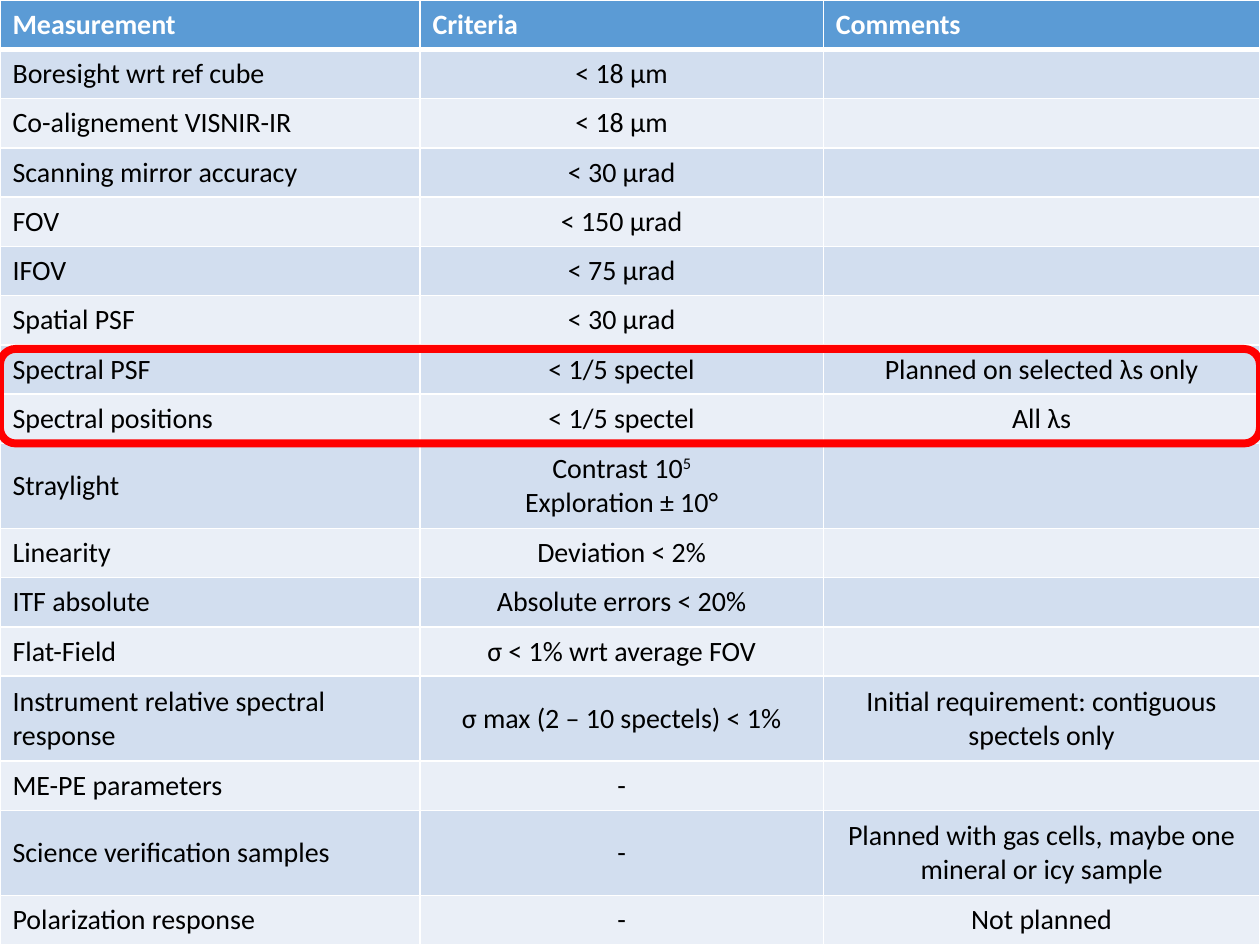
import pptx
import pptx.dml.color
import pptx.enum.shapes
import pptx.enum.text
import pptx.oxml
import pptx.oxml.ns
import pptx.util
from lxml import etree

Pt = pptx.util.Pt
qn = pptx.oxml.ns.qn
ALIGN = pptx.enum.text.PP_ALIGN

COLORS = {
    "header": "5B9BD5", "odd": "D2DEEF", "even": "EAEFF7",
    "border": "FFFFFF", "header_text": "FFFFFF", "text": "000000",
    "highlight": "FF0000",
}

# A line break starts a new paragraph, ^ starts a superscript
HEADER = ("Measurement", "Criteria", "Comments")
MEASUREMENTS = [
    ("Boresight wrt ref cube", "< 18 µm", ""),
    ("Co-alignement VISNIR-IR", "< 18 µm", ""),
    ("Scanning mirror accuracy", "< 30 µrad", ""),
    ("FOV", "< 150 µrad", ""),
    ("IFOV", "< 75 µrad", ""),
    ("Spatial PSF", "< 30 µrad", ""),
    ("Spectral PSF", "< 1/5 spectel", "Planned on selected λs only"),
    ("Spectral positions", "< 1/5 spectel", "All λs"),
    ("Straylight", "Contrast 10^5\nExploration ± 10°", ""),
    ("Linearity", "Deviation < 2%", ""),
    ("ITF absolute", "Absolute errors < 20%", ""),
    ("Flat-Field", "σ < 1% wrt average FOV", ""),
    ("Instrument relative spectral response", "σ max (2 – 10 spectels) < 1%",
     "Initial requirement: contiguous spectels only"),
    ("ME-PE parameters", "-", ""),
    ("Science verification samples", "-",
     "Planned with gas cells, maybe one mineral or icy sample"),
    ("Polarization response", "-", "Not planned"),
]
COLUMN_WIDTHS = (240, 230.5, 249.5)
ROW_HEIGHT, TALL_ROW_HEIGHT = 28.15, 48.6
TALL_ROWS = {9, 13, 15}


def rgb(name):
    return pptx.dml.color.RGBColor.from_string(COLORS[name])


class SlideBuilder:
    font = {"name": "Calibri", "size": Pt(16)}

    def __init__(self, presentation):
        self.slide = presentation.slides.add_slide(presentation.slide_layouts[6])

    def add_run(self, paragraph, text, color, bold, superscript=False):
        run = paragraph.add_run()
        run.text = text
        for attribute, value in {**self.font, "bold": bold}.items():
            setattr(run.font, attribute, value)
        run.font.color.rgb = rgb(color)
        if superscript:
            run.font._element.set("baseline", "30000")

    def write_text(self, cell, text, color, bold, alignment):
        frame = cell.text_frame
        for index, line in enumerate(text.split("\n")):
            paragraph = frame.add_paragraph() if index else frame.paragraphs[0]
            paragraph.alignment = alignment
            if not line:
                # Keeps an empty cell from stretching its row
                end = etree.SubElement(paragraph._p, qn("a:endParaRPr"))
                end.set("sz", str(int(self.font["size"].pt * 100)))
                continue
            base, _, exponent = line.partition("^")
            self.add_run(paragraph, base, color, bold)
            if exponent:
                self.add_run(paragraph, exponent, color, bold, superscript=True)

    def add_borders(self, cell, top, bottom):
        properties = cell._tc.get_or_add_tcPr()
        for side, width in {"L": 1, "R": 1, "T": top, "B": bottom}.items():
            line = etree.SubElement(properties, qn(f"a:ln{side}"), w=str(Pt(width)))
            fill = etree.SubElement(line, qn("a:solidFill"))
            etree.SubElement(fill, qn("a:srgbClr"), val=COLORS["border"])

    def add_table(self, rows):
        heights = [TALL_ROW_HEIGHT if index in TALL_ROWS else ROW_HEIGHT
                   for index in range(len(rows))]
        table = self.slide.shapes.add_table(
            len(rows), len(COLUMN_WIDTHS), 0, 0,
            Pt(sum(COLUMN_WIDTHS)), Pt(sum(heights))).table
        for column, width in zip(table.columns, COLUMN_WIDTHS):
            column.width = Pt(width)
        for row_index, (texts, height) in enumerate(zip(rows, heights)):
            table.rows[row_index].height = Pt(height)
            is_header = row_index == 0
            band = "header" if is_header else ("even", "odd")[row_index % 2]
            for column_index, text in enumerate(texts):
                cell = table.cell(row_index, column_index)
                self.add_borders(cell, top=3 if row_index == 1 else 1,
                                 bottom=3 if is_header else 1)
                cell.fill.solid()
                cell.fill.fore_color.rgb = rgb(band)
                cell.vertical_anchor = pptx.enum.text.MSO_ANCHOR.MIDDLE
                centered = column_index and not is_header
                self.write_text(cell, text,
                                "header_text" if is_header else "text", is_header,
                                ALIGN.CENTER if centered else ALIGN.LEFT)

    def add_highlight(self, left, top, width, height):
        shape = self.slide.shapes.add_shape(
            pptx.enum.shapes.MSO_SHAPE.ROUNDED_RECTANGLE,
            Pt(left), Pt(top), Pt(width), Pt(height))
        shape.shadow.inherit = False
        shape.fill.background()
        shape.line.color.rgb = rgb("highlight")
        shape.line.width = Pt(4.5)


def main():
    presentation = pptx.Presentation()
    presentation.slide_width, presentation.slide_height = Pt(720), Pt(540)
    builder = SlideBuilder(presentation)

    # Table of measurements
    builder.add_table([HEADER, *MEASUREMENTS])

    # Frame around the two spectral rows
    builder.add_highlight(0, 199.4, 720, 54)

    presentation.save("out.pptx")


if __name__ == "__main__":
    main()
